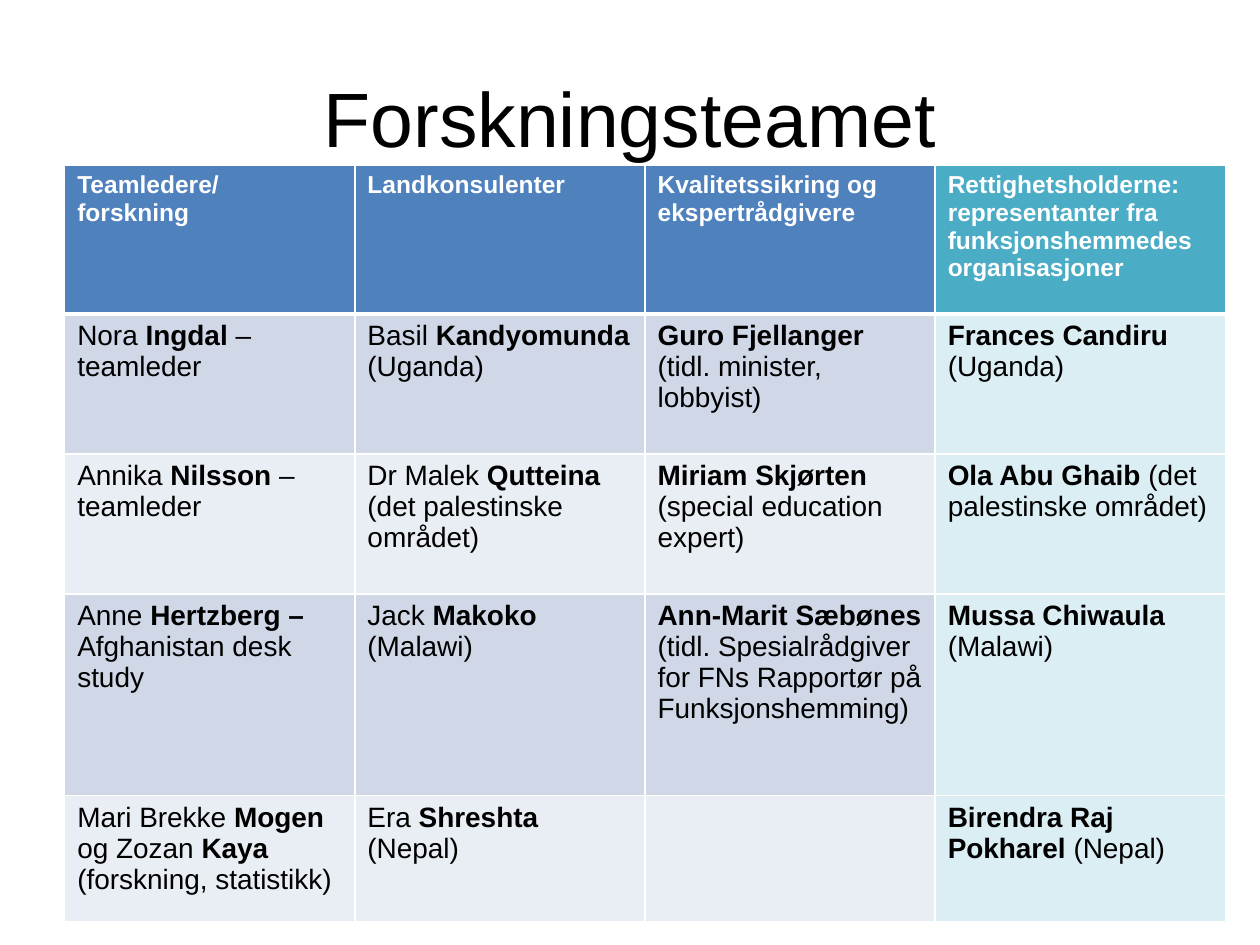
from lxml import etree
from pptx import Presentation
from pptx.dml.color import RGBColor
from pptx.enum import text
from pptx.oxml import ns
from pptx.util import Pt

TITLE = "Forskningsteamet"
# Asterisks enclose bold words; a line break starts a new paragraph.
HEADINGS = [
    "*Teamledere/*\n*forskning*",
    "*Landkonsulenter*",
    "*Kvalitetssikring og ekspertrådgivere*",
    "*Rettighetsholderne: representanter fra funksjonshemmedes organisasjoner*",
]
MEMBERS = [
    ["Nora *Ingdal* – teamleder",
     "Basil *Kandyomunda *(Uganda)",
     "*Guro Fjellanger *(tidl. minister, lobbyist)",
     "*Frances Candiru *(Uganda)"],
    ["Annika *Nilsson *– teamleder",
     "Dr Malek *Qutteina*\n(det palestinske området)",
     "*Miriam Skjørten *(special education expert)",
     "*Ola Abu Ghaib *(det palestinske området)"],
    ["Anne *Hertzberg – *Afghanistan desk study",
     "Jack *Makoko* (Malawi)",
     "*Ann-Marit Sæbønes *(tidl. Spesialrådgiver for FNs Rapportør på Funksjonshemming)",
     "*Mussa Chiwaula *(Malawi)"],
    ["Mari Brekke *Mogen *og Zozan *Kaya*\n(forskning, statistikk)",
     "Era *Shreshta* (Nepal)",
     "",
     "*Birendra Raj Pokharel *(Nepal)"],
]
ROW_HEIGHTS = [85, 80, 80, 115.2, 72]
COLUMN_WIDTH = 165.8
HEADING_FILL, HOLDER_HEADING_FILL = "4F81BD", "4BACC6"
BAND_FILLS, HOLDER_FILL = ["D0D8E8", "E9EDF4"], "DBEEF4"
WHITE, BLACK = "FFFFFF", "000000"


def color(value):
    return RGBColor.from_string(value)


def set_font(font, rgb, **values):
    font.color.rgb = color(rgb)
    for name, value in {"name": "Arial", **values}.items():
        setattr(font, name, value)


def set_borders(cell, widths):
    properties = cell._tc.get_or_add_tcPr()
    for side, width in widths.items():
        line = etree.SubElement(properties, ns.qn(f"a:ln{side}"), w=str(Pt(width)))
        fill = etree.SubElement(line, ns.qn("a:solidFill"))
        etree.SubElement(fill, ns.qn("a:srgbClr"), val=WHITE)


def write_cell(cell, content, size, rgb):
    for index, line in enumerate(content.split("\n")):
        frame = cell.text_frame
        para = frame.add_paragraph() if index else frame.paragraphs[0]
        for part, words in enumerate(line.split("*")):
            if words:
                span = para.add_run()
                span.text = words
                set_font(span.font, rgb, size=Pt(size), bold=part % 2 == 1)


deck = Presentation()
deck.slide_width, deck.slide_height = Pt(720), Pt(540)
page = deck.slides.add_slide(deck.slide_layouts[5])

title = page.shapes.title
title.left, title.top, title.width, title.height = Pt(36), Pt(21.6), Pt(648), Pt(90)
title.text_frame.text = TITLE
title.text_frame.vertical_anchor = text.MSO_ANCHOR.MIDDLE
heading = title.text_frame.paragraphs[0]
heading.alignment = text.PP_ALIGN.CENTER
set_font(heading.runs[0].font, BLACK, size=Pt(44))

rows = [HEADINGS] + MEMBERS
count = len(HEADINGS)
table = page.shapes.add_table(len(rows), count, Pt(37), Pt(94.5),
                              Pt(COLUMN_WIDTH * count), Pt(sum(ROW_HEIGHTS))).table
for column in table.columns:
    column.width = Pt(COLUMN_WIDTH)
for r, (contents, height) in enumerate(zip(rows, ROW_HEIGHTS)):
    table.rows[r].height = Pt(height)
    is_heading = r == 0
    fills = [HEADING_FILL if is_heading else BAND_FILLS[(r - 1) % 2]] * (count - 1)
    fills.append(HOLDER_HEADING_FILL if is_heading else HOLDER_FILL)
    for c, (content, fill) in enumerate(zip(contents, fills)):
        cell = table.cell(r, c)
        set_borders(cell, {"L": 1, "R": 1, "T": 3 if r == 1 else 1,
                           "B": 3 if is_heading else 1})
        cell.fill.solid()
        cell.fill.fore_color.rgb = color(fill)
        write_cell(cell, content, 14 if is_heading else 16,
                   WHITE if is_heading else BLACK)

deck.save("out.pptx")
